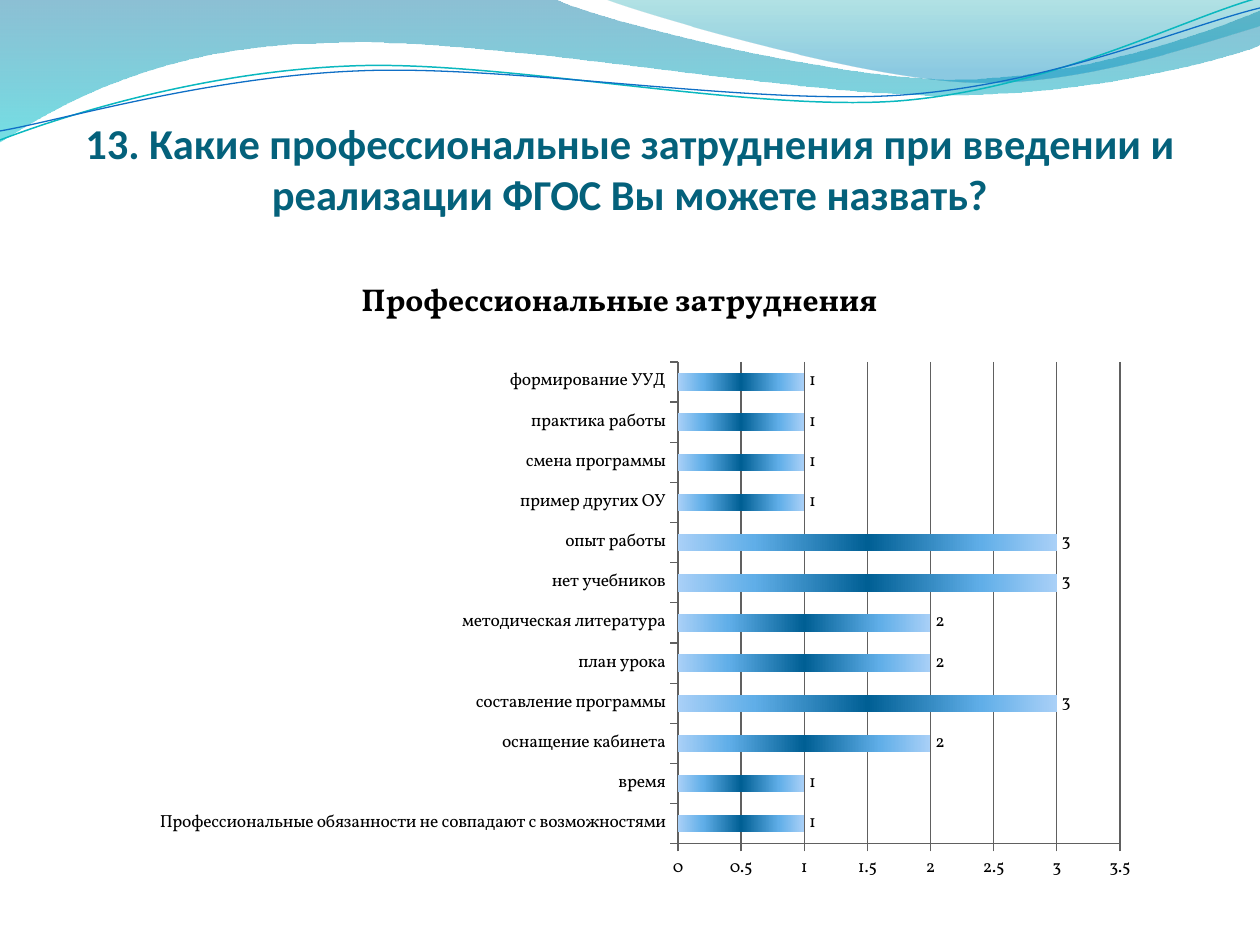
from dataclasses import dataclass
from typing import Optional

from lxml import etree
from pptx import Presentation
from pptx.chart.data import CategoryChartData
from pptx.dml.color import RGBColor
from pptx.enum.chart import XL_CHART_TYPE, XL_LABEL_POSITION, XL_TICK_MARK
from pptx.enum.text import MSO_ANCHOR, PP_ALIGN
from pptx.oxml.ns import qn
from pptx.util import Emu, Pt

PX = 914400 / 126

BLACK = RGBColor(0x00, 0x00, 0x00)
AXIS_GREY = RGBColor(0x60, 0x60, 0x60)
TITLE_TEAL = RGBColor(0x04, 0x61, 0x7B)
DEEP_BLUE = RGBColor(0x00, 0x74, 0xA1)
CYAN = RGBColor(0x00, 0xC6, 0xCF)
SEA_GREEN = RGBColor(0x00, 0xA1, 0xA9)
SKY_BLUE = RGBColor(0x00, 0x8B, 0xBF)
LINE_TEAL = RGBColor(0x0A, 0xB8, 0xBF)
LINE_BLUE = RGBColor(0x0F, 0x6F, 0xC6)
BAR_EDGE = RGBColor(0xA9, 0xD0, 0xF7)
BAR_MID = RGBColor(0x60, 0xAE, 0xE8)
BAR_CORE = RGBColor(0x00, 0x5F, 0x94)

TITLE = "13. Какие профессиональные затруднения при введении и реализации ФГОС Вы можете назвать?"
CHART_TITLE = "Профессиональные затруднения"
CHART_BOX = (64, 252, 1111, 656)
PLOT_BOX = (614, 110, 442, 482)
DIFFICULTIES = {
    "Профессиональные обязанности не совпадают с возможностями": 1,
    "время": 1,
    "оснащение кабинета": 2,
    "составление программы": 3,
    "план урока": 2,
    "методическая литература": 2,
    "нет учебников": 3,
    "опыт работы": 3,
    "пример других ОУ": 1,
    "смена программы": 1,
    "практика работы": 1,
    "формирование УУД": 1,
}


@dataclass(frozen=True)
class Stop:
    position: int
    color: RGBColor
    opacity: int = 100


@dataclass(frozen=True)
class Wave:
    """Steps hold one point for a straight line or three for a Bezier curve."""
    start: tuple
    steps: tuple
    stops: tuple = ()
    line: Optional[RGBColor] = None
    width: float = 0.75


WAVES = (
    Wave((0, 0), (
        ((554, -1),), ((600, 21), (837, 79), (955, 79)),
        ((1075, 79), (1207, 33), (1260, 11)), ((1261, 45),),
        ((1239, 55), (1096, 96), (940, 95)), ((784, 95), (481, 35), (324, 43)),
        ((163, 45), (58, 105), (-1, 142))),
        stops=(Stop(0, DEEP_BLUE, 45), Stop(100, CYAN, 55))),
    Wave((604, -1), (
        ((641, 14), (859, 78), (969, 82)), ((1079, 87), (1211, 40), (1260, 26)),
        ((1260, 0),)),
        stops=(Stop(0, SEA_GREEN, 30), Stop(80, SKY_BLUE, 45))),
    Wave((0, 140), (
        ((60, 117), (199, 72), (349, 66)), ((498, 59), (747, 112), (898, 101)),
        ((1050, 89), (1182, 19), (1258, -2))),
        line=LINE_TEAL, width=0.85),
    Wave((0, 131), (
        ((59, 121), (207, 77), (357, 71)), ((508, 64), (752, 106), (903, 95)),
        ((1053, 84), (1186, 26), (1260, 8))),
        line=LINE_BLUE),
)


def px(length: float) -> Emu:
    return Emu(round(length * PX))


def place(shape, left: int, top: int, width: int, height: int) -> None:
    shape.left, shape.top, shape.width, shape.height = map(px, (left, top, width, height))


def write_text(frame, text: str, *, size: float, font: str, color: RGBColor, bold: bool = False) -> None:
    paragraph = frame.paragraphs[0]
    paragraph.alignment = PP_ALIGN.CENTER
    run = paragraph.add_run()
    run.text = text
    run.font.size, run.font.name, run.font.bold = Pt(size), font, bold
    run.font.color.rgb = color


def apply_gradient(fill, element, stops: tuple, angle: int) -> None:
    """Replace the stops of the first gradient found inside element."""
    fill.gradient()
    fill.gradient_angle = angle
    stop_list = next(element.iter(qn("a:gsLst")))
    for old_stop in list(stop_list):
        stop_list.remove(old_stop)
    for stop in stops:
        entry = etree.SubElement(stop_list, qn("a:gs"), pos=str(stop.position * 1000))
        color = etree.SubElement(entry, qn("a:srgbClr"), val=str(stop.color))
        if stop.opacity < 100:
            etree.SubElement(color, qn("a:alpha"), val=str(stop.opacity * 1000))


def bend_segments(shape, steps: tuple) -> None:
    """Join the straight segments of every three-point step into one Bezier curve."""
    segments = iter(list(shape.element.iter(qn("a:lnTo"))))
    for step in steps:
        parts = [next(segments) for _ in step]
        if len(parts) == 3:
            curve = etree.Element(qn("a:cubicBezTo"))
            parts[0].addprevious(curve)
            for part in parts:
                curve.append(part[0])
                part.getparent().remove(part)


def draw_wave(slide, wave: Wave):
    builder = slide.shapes.build_freeform(*map(px, wave.start))
    builder.add_line_segments([(px(x), px(y)) for step in wave.steps for x, y in step],
                              close=bool(wave.stops))
    shape = builder.convert_to_shape()
    bend_segments(shape, wave.steps)
    shape.shadow.inherit = False
    if wave.stops:
        apply_gradient(shape.fill, shape.element, wave.stops, 270)
        shape.line.fill.background()
    else:
        shape.fill.background()
        shape.line.color.rgb = wave.line
        shape.line.width = Pt(wave.width)
    return shape


def draw_background(slide, master) -> None:
    """Draw the waves and hand them to the master, behind its placeholders."""
    for index, wave in enumerate(WAVES, start=2):
        master.shapes.element.insert(index, draw_wave(slide, wave).element)


def fix_plot_area(chart) -> None:
    plot_area = next(chart.element.iter(qn("c:plotArea")))
    for old_layout in plot_area.findall(qn("c:layout")):
        plot_area.remove(old_layout)
    layout = etree.Element(qn("c:layout"))
    manual = etree.SubElement(layout, qn("c:manualLayout"))
    settings = {"layoutTarget": "inner", "xMode": "edge", "yMode": "edge"}
    for tag, length, whole in zip("xywh", PLOT_BOX, CHART_BOX[2:] * 2):
        settings[tag] = length / whole
    for tag, value in settings.items():
        etree.SubElement(manual, qn(f"c:{tag}"), val=str(value))
    plot_area.insert(0, layout)


def draw_chart(slide) -> None:
    data = CategoryChartData()
    data.categories = list(DIFFICULTIES)
    data.add_series(CHART_TITLE, list(DIFFICULTIES.values()))
    chart = slide.shapes.add_chart(XL_CHART_TYPE.BAR_CLUSTERED, *map(px, CHART_BOX), data).chart
    chart.has_legend = False
    chart.font.size, chart.font.name = Pt(10), "Vollkorn"
    chart.font.color.rgb = BLACK
    chart.has_title = True
    write_text(chart.chart_title.text_frame, CHART_TITLE,
               size=18, font="Vollkorn", color=BLACK, bold=True)
    fix_plot_area(chart)

    scale = chart.value_axis
    scale.minimum_scale, scale.maximum_scale, scale.major_unit = 0, 3.5, 0.5
    scale.has_major_gridlines = True
    for axis in (chart.category_axis, scale):
        axis.major_tick_mark = XL_TICK_MARK.OUTSIDE
        axis.minor_tick_mark = XL_TICK_MARK.NONE
    for line in (chart.category_axis.format.line, scale.format.line,
                 scale.major_gridlines.format.line):
        line.color.rgb = AXIS_GREY
        line.width = Pt(0.75)

    plot = chart.plots[0]
    plot.gap_width = 130
    plot.vary_by_categories = False
    bars = plot.series[0]
    bars.data_labels.show_value = True
    bars.data_labels.position = XL_LABEL_POSITION.OUTSIDE_END
    apply_gradient(bars.format.fill, chart.element,
                   (Stop(0, BAR_EDGE), Stop(20, BAR_MID), Stop(50, BAR_CORE),
                    Stop(80, BAR_MID), Stop(100, BAR_EDGE)), 0)


def draw_title(slide) -> None:
    title = slide.shapes.title
    place(title, 63, 97, 1134, 217)
    frame = title.text_frame
    frame.word_wrap = True
    frame.vertical_anchor = MSO_ANCHOR.BOTTOM
    frame.margin_left = frame.margin_right = 0
    frame.margin_bottom = px(95)
    write_text(frame, TITLE, size=24.3, font="Calibri", color=TITLE_TEAL, bold=True)


def main() -> None:
    deck = Presentation()
    deck.slide_width, deck.slide_height = px(1260), px(945)
    slide = deck.slides.add_slide(deck.slide_layouts[5])
    draw_background(slide, deck.slide_master)
    draw_title(slide)
    draw_chart(slide)
    deck.save("out.pptx")


if __name__ == "__main__":
    main()
